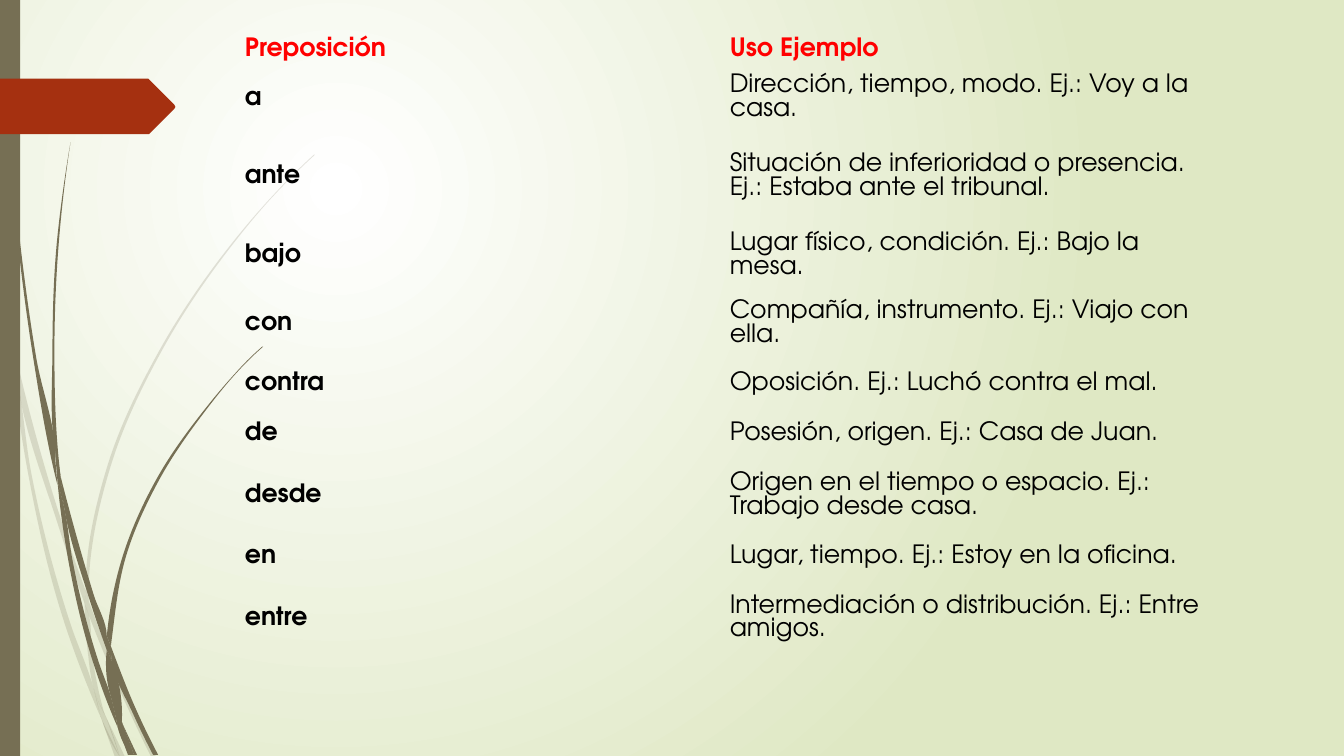
from math import dist

from lxml import etree
from pptx import Presentation
from pptx.dml.color import RGBColor
from pptx.enum.shapes import MSO_SHAPE as Shape
from pptx.enum.text import MSO_ANCHOR as Anchor
from pptx.oxml import parse_xml
from pptx.oxml.ns import nsdecls, qn
from pptx.util import Pt

FONT = "TeX Gyre Adventor"
COLOURS = {"olive": "766F54", "rust": "A53010", "heading": "FF0000",
           "text": "000000", "centre": "FFFFFF", "edge": "DFE8C4"}

# Table content: preposition, use with example, row height in points
PREPOSITIONS = [
    ("Preposición", "Uso Ejemplo", 20.9),
    ("a", "Dirección, tiempo, modo. Ej.: Voy a la casa.", 49),
    ("ante", "Situación de inferioridad o presencia. Ej.: Estaba ante el tribunal.", 63.4),
    ("bajo", "Lugar físico, condición. Ej.: Bajo la mesa.", 49),
    ("con", "Compañía, instrumento. Ej.: Viajo con ella.", 49),
    ("contra", "Oposición. Ej.: Luchó contra el mal.", 36),
    ("de", "Posesión, origen. Ej.: Casa de Juan.", 36),
    ("desde", "Origen en el tiempo o espacio. Ej.: Trabajo desde casa.", 51.8),
    ("en", "Lugar, tiempo. Ej.: Estoy en la oficina.", 36),
    ("entre", "Intermediación o distribución. Ej.: Entre amigos.", 51.8),
]

# Outlines as smooth edges, on a grid of 0.72 points
GRID = 0.72
PALE_BLADES = [
    [[(11, 350), (9, 322), (0, 282)], [(0, 299), (10, 344), (11, 350)]],
    [[(14, 345), (17, 376), (58, 522), (84, 599)], [(85, 586), (62, 520), (14, 345)]],
    [[(88, 610), (123, 694), (150, 751)], [(155, 751), (127, 692), (92, 607), (88, 596)]],
    [[(119, 751)], [(124, 751), (105, 711)]],
    [[(11, 350), (28, 470), (65, 621), (92, 693), (101, 714)],
     [(99, 707), (93, 683), (70, 619), (31, 469), (17, 376), (11, 350)]],
    [[(84, 599), (87, 646), (93, 683), (96, 692), (105, 711)],
     [(103, 706), (91, 646), (88, 610), (84, 599)]],
    [[(88, 596), (88, 584), (110, 462), (160, 349), (229, 245), (268, 198), (290, 175), (312, 154)],
     [(312, 153), (289, 175), (268, 197), (228, 244), (158, 348), (107, 461), (85, 584), (85, 586)]],
    [[(101, 714), (114, 751)], [(119, 751), (101, 714)]],
    [[(84, 599), (88, 610)], [(88, 596), (85, 586)]],
    [[(93, 683), (99, 707), (101, 714), (119, 751)], [(119, 751), (105, 711), (96, 692), (93, 683)]],
]
DARK_BLADES = [
    [[(3, 0), (4, 48), (7, 110), (17, 233), (33, 355), (56, 477), (57, 481)],
     [(55, 457), (55, 453), (36, 355), (19, 232), (8, 109), (5, 48), (4, 0)]],
    [[(60, 472), (64, 505), (88, 592), (106, 645)], [(106, 633), (106, 631), (93, 590), (60, 472)]],
    [[(110, 641), (111, 656), (132, 708), (152, 749)], [(157, 749), (136, 706), (113, 649), (110, 641)]],
    [[(57, 477), (68, 557), (93, 659), (111, 708), (117, 722)],
     [(116, 717), (110, 691), (98, 657), (72, 556), (64, 505), (57, 477)]],
    [[(60, 472), (58, 453), (54, 349), (58, 245), (63, 193), (70, 141)],
     [(70, 141), (62, 193), (56, 245), (52, 349), (55, 449), (60, 472)]],
    [[(133, 749)], [(136, 749), (122, 719)]],
    [[(57, 477), (64, 505)], [(60, 472), (55, 449), (55, 453)]],
    [[(110, 641), (111, 633), (125, 552), (158, 476), (205, 406), (231, 374), (245, 359), (261, 344)],
     [(260, 344), (245, 358), (231, 373), (204, 405), (156, 474), (122, 551), (106, 631)]],
    [[(117, 722), (127, 749)], [(131, 749), (117, 722)]],
    [[(106, 645), (110, 691), (116, 706), (122, 719)], [(121, 716), (111, 656), (106, 645)]],
    [[(106, 645), (111, 656)], [(110, 641), (106, 631)]],
    [[(110, 691), (116, 717), (117, 722), (130, 749)], [(133, 749), (122, 719), (110, 691)]],
]
ARROW = [[(0, 78), (147, 78)], [(148, 79), (173, 104)], [(174, 106)],
         [(173, 108), (148, 133)], [(146, 133), (0, 133)]]


def bezier_controls(edge):
    """Two control points for each stretch of a smooth curve through the edge."""
    lengths = [dist(a, b) for a, b in zip(edge, edge[1:])]
    slopes = [tuple((q - p) / length for p, q in zip(a, b))
              for a, b, length in zip(edge, edge[1:], lengths)]
    inner = [tuple((u * after + v * before) / (before + after) for u, v in zip(s, t))
             for s, t, before, after in zip(slopes, slopes[1:], lengths, lengths[1:])]
    first = tuple(2 * s - t for s, t in zip(slopes[0], inner[0]))
    last = tuple(2 * s - t for s, t in zip(slopes[-1], inner[-1]))
    tangents = [first, *inner, last]
    return [(tuple(p + m * length / 3 for p, m in zip(a, tangents[i])),
             tuple(p - m * length / 3 for p, m in zip(b, tangents[i + 1])))
            for i, (a, b, length) in enumerate(zip(edge, edge[1:], lengths))]


def paint(shape, colour, opacity=100):
    shape.shadow.inherit = False
    shape.line.fill.background()
    shape.fill.solid()
    shape.fill.fore_color.rgb = RGBColor.from_string(COLOURS[colour])
    if opacity < 100:
        tint = shape.fill._xPr.find(".//" + qn("a:srgbClr"))
        etree.SubElement(tint, qn("a:alpha")).set("val", str(opacity * 1000))


def draw_outline(slide, edges, colour, opacity=100):
    points = [(Pt(x * GRID), Pt(y * GRID)) for edge in edges for x, y in edge]
    builder = slide.shapes.build_freeform(*points[0])
    builder.add_line_segments(points[1:], close=True)
    outline = builder.convert_to_shape()
    # Bend the stretches of each edge of three or more points
    stretches = list(outline._element.iter(qn("a:lnTo")))
    start = 0
    for edge in edges:
        controls = bezier_controls(edge) if len(edge) > 2 else []
        for stretch, pair in zip(stretches[start:], controls):
            stretch.tag = qn("a:cubicBezTo")
            for place, (x, y) in enumerate(pair):
                control = etree.Element(qn("a:pt"))
                control.set("x", str(Pt(x * GRID) - outline.left))
                control.set("y", str(Pt(y * GRID) - outline.top))
                stretch.insert(place, control)
        start += len(edge)
    paint(outline, colour, opacity)


def set_background(slide):
    slide.background.fill.solid()
    properties = slide.background._cSld.bg.bgPr
    stops = "".join(f'<a:gs pos="{pos}"><a:srgbClr val="{COLOURS[name]}"/></a:gs>'
                    for pos, name in ((0, "centre"), (100000, "edge")))
    properties.replace(properties[0], parse_xml(
        f'<a:gradFill {nsdecls("a")} rotWithShape="1"><a:gsLst>{stops}</a:gsLst>'
        '<a:path path="circle"><a:fillToRect l="50000" t="50000" r="100000" b="100000"/>'
        '</a:path></a:gradFill>'))


def add_prepositions(slide):
    heights = [height for *_, height in PREPOSITIONS]
    table = slide.shapes.add_table(len(heights), 2, Pt(169.9), Pt(24.5),
                                   Pt(692.6), Pt(sum(heights))).table
    table.first_row = table.horz_banding = False
    # No style, no grid
    table._tbl.tblPr.find(qn("a:tableStyleId")).text = "{2D5ABB26-0587-4C30-8999-92F81FD0307C}"
    for row, (*texts, height) in enumerate(PREPOSITIONS):
        table.rows[row].height = Pt(height)
        for column, text in enumerate(texts):
            cell = table.cell(row, column)
            cell.fill.background()
            cell.vertical_anchor = Anchor.MIDDLE
            cell.margin_left = cell.margin_right = Pt(5.1)
            cell.margin_top = cell.margin_bottom = Pt(1.9)
            paragraph = cell.text_frame.paragraphs[0]
            paragraph.text = text
            paragraph.line_spacing = Pt(17)
            font = paragraph.font
            font.name, font.size = FONT, Pt(18)
            font.bold = row == 0 or column == 0
            font.color.rgb = RGBColor.from_string(COLOURS["text" if row else "heading"])


def main():
    deck = Presentation()
    deck.slide_width, deck.slide_height = Pt(960), Pt(540)
    slide = deck.slides.add_slide(deck.slide_layouts[6])
    set_background(slide)
    # Grass, side bar and arrow
    for blade in PALE_BLADES:
        draw_outline(slide, blade, "olive", 20)
    for blade in DARK_BLADES:
        draw_outline(slide, blade, "olive")
    paint(slide.shapes.add_shape(Shape.RECTANGLE, 0, 0, Pt(14.4), Pt(540)), "olive")
    draw_outline(slide, ARROW, "rust")
    # Prepositions
    add_prepositions(slide)
    deck.save("out.pptx")


if __name__ == "__main__":
    main()
